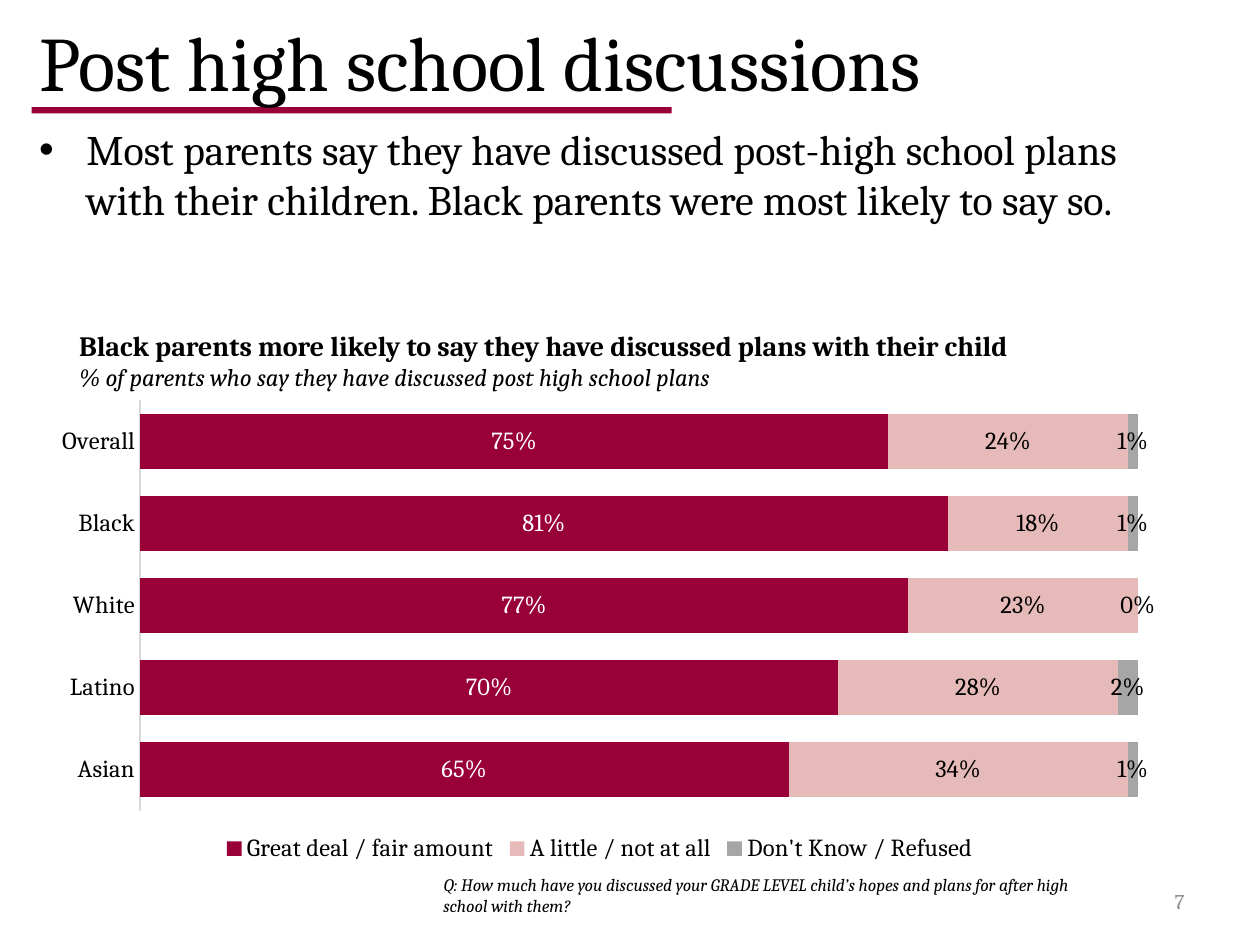
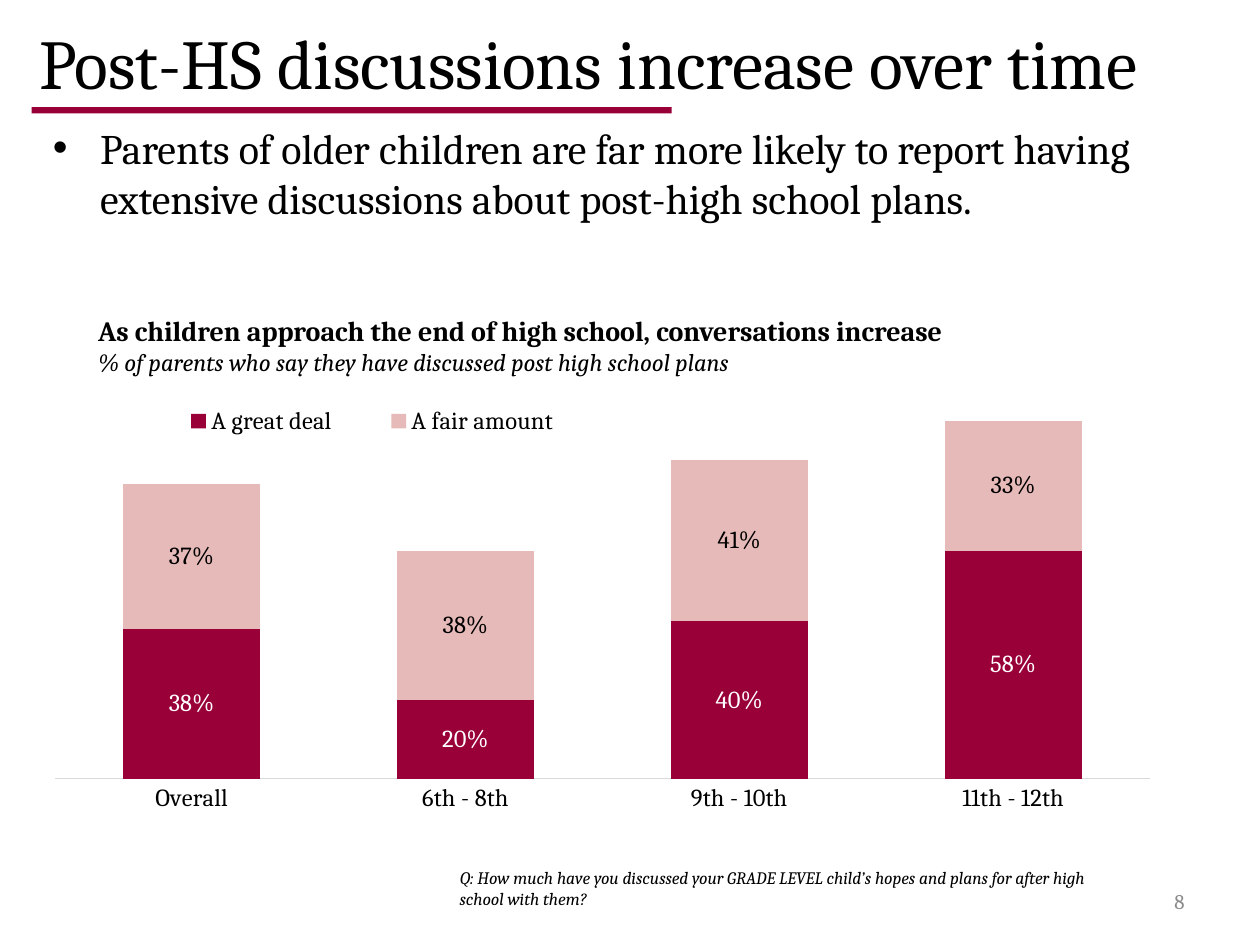
from lxml import etree
from pptx import Presentation
from pptx.chart.data import CategoryChartData
from pptx.dml.color import RGBColor
from pptx.enum import chart as charts, shapes, text
from pptx.oxml import ns
from pptx.util import Inches, Pt

# Shared look
FONT = "Cambria"
BLACK = RGBColor(0x00, 0x00, 0x00)
WHITE = RGBColor(0xFF, 0xFF, 0xFF)
CRIMSON = RGBColor(0x99, 0x00, 0x38)
PINK = RGBColor(0xE6, 0xBA, 0xB8)
GRAY = RGBColor(0xA6, 0xA6, 0xA6)
AXIS_GRAY = RGBColor(0xD9, 0xD9, 0xD9)
NUMBER_GRAY = RGBColor(0x8C, 0x8C, 0x8C)
PERCENT = "###0%"
SUBHEAD = "% of parents who say they have discussed post high school plans"
QUESTION = ("Q: How much have you discussed your GRADE LEVEL child’s hopes "
            "and plans for after high school with them?")

# Content of each slide; each chart series is name, values, fill, label colour
PAGES = [
    dict(
        number="7", title="Post high school discussions", title_size=44,
        title_at=(0.21, 0, 9, 0.97),
        body="Most parents say they have discussed post-high school plans with "
             "their children. Black parents were most likely to say so.",
        body_at=(0.21, 0.93, 9, 1.6),
        heading="Black parents more likely to say they have discussed plans "
                "with their child",
        heading_at=(0.53, 2.56, 9.57, 0.61),
        question_at=(3.42, 6.89, 5.45, 0.44),
        kind=charts.XL_CHART_TYPE.BAR_STACKED, gap=50,
        chart_at=(0.31, 3.1, 8.9, 3.79),
        plot_area=(0.09, 0.02, 0.89, 0.86), legend_area=None,
        categories=["Asian", "Latino", "White", "Black", "Overall"],
        series=[
            ("Great deal / fair amount", (0.65, 0.70, 0.77, 0.81, 0.75), CRIMSON, WHITE),
            ("A little / not at all", (0.34, 0.28, 0.23, 0.18, 0.24), PINK, BLACK),
            ("Don't Know / Refused", (0.01, 0.02, 0, 0.01, 0.01), GRAY, BLACK),
        ],
    ),
    dict(
        number="8", title="Post-HS discussions increase over time", title_size=40,
        title_at=(0.21, 0, 9.79, 0.97),
        body="Parents of older children are far more likely to report having "
             "extensive discussions about post-high school plans.",
        body_at=(0.32, 0.92, 9, 1.63),
        heading="As children approach the end of high school, conversations increase",
        heading_at=(0.68, 2.44, 8.75, 0.61),
        question_at=(3.55, 6.83, 5.37, 0.44),
        kind=charts.XL_CHART_TYPE.COLUMN_STACKED, gap=100,
        chart_at=(0.21, 3.06, 9, 3.54),
        plot_area=(0.025, 0, 0.966, 0.882), legend_area=(0.1, 0.04, 0.41, 0.08),
        categories=["Overall", "6th - 8th", "9th - 10th", "11th - 12th"],
        series=[
            ("A great deal", (0.38, 0.20, 0.40, 0.58), CRIMSON, WHITE),
            ("A fair amount", (0.37, 0.38, 0.41, 0.33), PINK, BLACK),
        ],
    ),
]


def write(box, at, lines, anchor=text.MSO_ANCHOR.TOP, align=text.PP_ALIGN.LEFT):
    """Place a box and fill it; each line is words, size, colour, bold, italic."""
    box.left, box.top, box.width, box.height = map(Inches, at)
    frame = box.text_frame
    frame.word_wrap = True
    frame.auto_size = text.MSO_AUTO_SIZE.NONE
    frame.vertical_anchor = anchor
    for index, (words, size, color, bold, italic) in enumerate(lines):
        para = frame.add_paragraph() if index else frame.paragraphs[0]
        para.alignment = align
        para.space_before = Pt(0)
        span = para.add_run()
        span.text = words
        span.font.name, span.font.size = FONT, Pt(size)
        span.font.bold, span.font.italic = bold, italic
        span.font.color.rgb = color


def set_layout(parent, index, area, inner):
    """Fix a chart part at x, y, width, height as fractions of the chart."""
    for old in parent.findall(ns.qn("c:layout")):
        parent.remove(old)
    layout = etree.Element(ns.qn("c:layout"))
    manual = etree.SubElement(layout, ns.qn("c:manualLayout"))
    settings = [("layoutTarget", "inner")] if inner else []
    settings += [("xMode", "edge"), ("yMode", "edge"), *zip("xywh", area)]
    for name, value in settings:
        etree.SubElement(manual, ns.qn("c:" + name)).set("val", str(value))
    parent.insert(index, layout)


deck = Presentation()
deck.slide_width, deck.slide_height = Inches(10), Inches(7.5)

for info in PAGES:
    page = deck.slides.add_slide(deck.slide_layouts[1])
    title, body = page.placeholders

    # Title with the rule behind it
    write(title, info["title_at"],
          [(info["title"], info["title_size"], BLACK, False, False)],
          text.MSO_ANCHOR.MIDDLE)
    rule = page.shapes.add_shape(shapes.MSO_SHAPE.RECTANGLE, Inches(0.25),
                                 Inches(0.85), Inches(5.08), Inches(0.05))
    rule.shadow.inherit = False
    rule.fill.solid()
    rule.fill.fore_color.rgb = CRIMSON
    rule.line.fill.background()
    title.element.addprevious(rule.element)

    # Bullet, page number, chart heading and survey question
    write(body, info["body_at"], [(info["body"], 24, BLACK, False, False)])
    number = page.shapes.add_textbox(0, 0, 0, 0)
    write(number, (7.17, 6.95, 2.33, 0.4),
          [(info["number"], 12, NUMBER_GRAY, False, False)],
          text.MSO_ANCHOR.MIDDLE, text.PP_ALIGN.RIGHT)
    heading = page.shapes.add_textbox(0, 0, 0, 0)
    write(heading, info["heading_at"], [(info["heading"], 16, BLACK, True, False),
                                        (SUBHEAD, 14, BLACK, False, True)])
    question = page.shapes.add_textbox(0, 0, 0, 0)
    write(question, info["question_at"], [(QUESTION, 10, BLACK, False, True)])

    # Stacked chart
    data = CategoryChartData(number_format=PERCENT)
    data.categories = info["categories"]
    for name, values, fill, label_color in info["series"]:
        data.add_series(name, values)
    chart = page.shapes.add_chart(info["kind"], *map(Inches, info["chart_at"]), data).chart
    chart.has_title = False
    chart.font.name, chart.font.size = "Calibri", Pt(10)
    chart.font.color.rgb = BLACK
    plot = chart.plots[0]
    plot.gap_width, plot.overlap = info["gap"], 100
    plot.vary_by_categories = False
    for series, (name, values, fill, label_color) in zip(plot.series, info["series"]):
        series.format.fill.solid()
        series.format.fill.fore_color.rgb = fill
        labels = series.data_labels
        labels.show_value = True
        labels.number_format, labels.number_format_is_linked = PERCENT, False
        labels.position = charts.XL_LABEL_POSITION.CENTER
        labels.font.name, labels.font.size = FONT, Pt(14)
        labels.font.color.rgb = label_color

    # Axes
    value_axis = chart.value_axis
    value_axis.minimum_scale, value_axis.maximum_scale = 0, 1
    value_axis.has_major_gridlines = False
    value_axis.visible = False
    category_axis = chart.category_axis
    category_axis.major_tick_mark = charts.XL_TICK_MARK.NONE
    category_axis.format.line.color.rgb = AXIS_GRAY
    category_axis.format.line.width = Pt(0.75)

    # Legend and layout
    chart.has_legend = True
    legend = chart.legend
    legend.position = charts.XL_LEGEND_POSITION.BOTTOM
    legend.include_in_layout = False
    for font in (category_axis.tick_labels.font, legend.font):
        font.name, font.size = FONT, Pt(14)
        font.color.rgb = BLACK
    chart_root = chart.element
    set_layout(chart_root.find(".//" + ns.qn("c:plotArea")), 0, info["plot_area"], True)
    if info["legend_area"]:
        set_layout(chart_root.find(".//" + ns.qn("c:legend")), 1, info["legend_area"], False)

deck.save("out.pptx")
